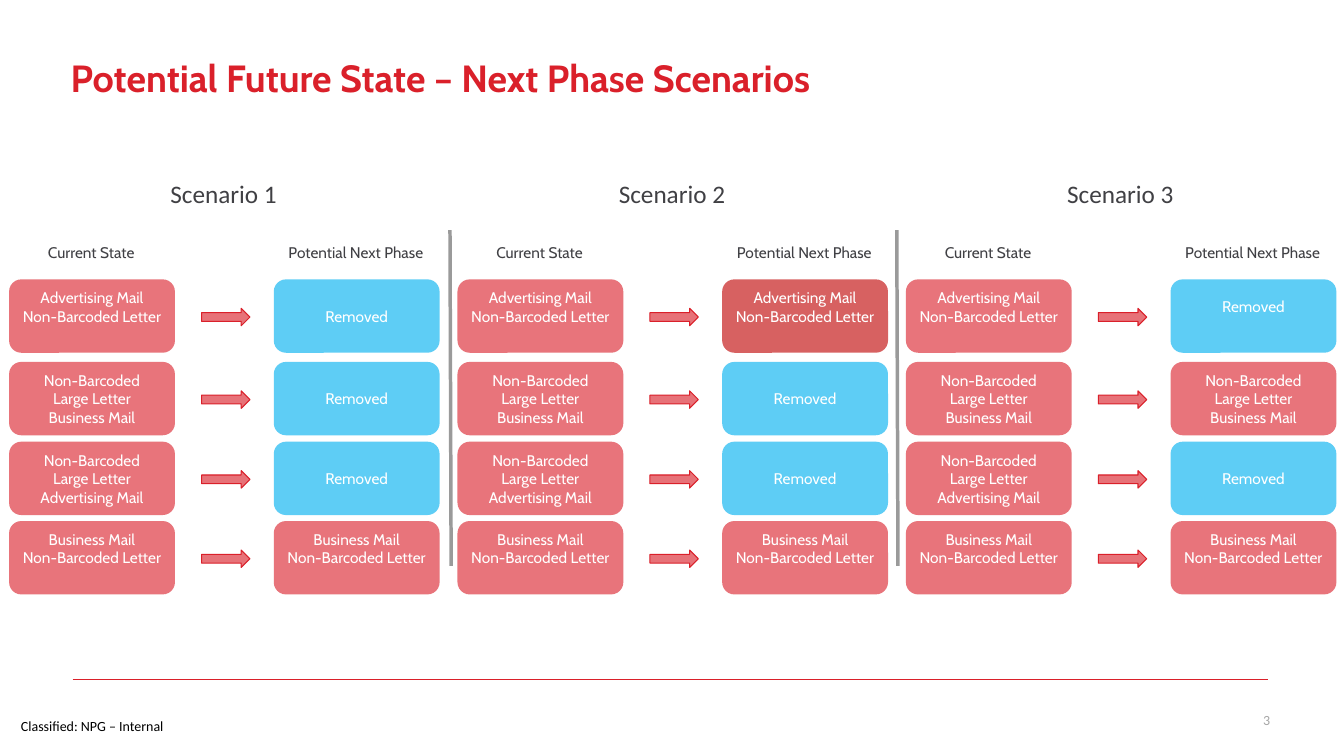
from lxml import etree
from pptx import Presentation
from pptx.dml.color import RGBColor
from pptx.enum.shapes import MSO_CONNECTOR, MSO_SHAPE
from pptx.enum.text import MSO_ANCHOR, MSO_AUTO_SIZE, PP_ALIGN
from pptx.oxml.ns import qn
from pptx.util import Cm, Pt

LEFT, CENTER, RIGHT = PP_ALIGN.LEFT, PP_ALIGN.CENTER, PP_ALIGN.RIGHT
TOP, MIDDLE = MSO_ANCHOR.TOP, MSO_ANCHOR.MIDDLE
ROUNDED, ARROW = MSO_SHAPE.ROUNDED_RECTANGLE, MSO_SHAPE.RIGHT_ARROW
STRAIGHT = MSO_CONNECTOR.STRAIGHT

RED, DARK_RED, BLUE = "DA202A", "C00000", "00B0F0"
WHITE, BLACK, TEXT_GRAY = "FFFFFF", "000000", "404044"
NUMBER_GRAY, DIVIDER_GRAY = "A6A6A6", "9A9A9A"

TITLE = "Potential Future State – Next Phase Scenarios"
CLASSIFICATION = "Classified: NPG – Internal"
SLIDE_NUMBER = "3"
CURRENT_HEADING = "Current State"
NEXT_HEADING = "Potential Next Phase"

ADVERTISING_LETTER = "Advertising Mail\nNon-Barcoded Letter"
BUSINESS_LARGE = "Non-Barcoded\nLarge Letter\nBusiness Mail"
ADVERTISING_LARGE = "Non-Barcoded\nLarge Letter\nAdvertising Mail"
BUSINESS_LETTER = "Business Mail\nNon-Barcoded Letter"
REMOVED = "Removed"

CURRENT_STATE = [ADVERTISING_LETTER, BUSINESS_LARGE, ADVERTISING_LARGE, BUSINESS_LETTER]
SCENARIOS = {
    "Scenario 1": [(REMOVED, BLUE), (REMOVED, BLUE), (REMOVED, BLUE), (BUSINESS_LETTER, RED)],
    "Scenario 2": [(ADVERTISING_LETTER, DARK_RED), (REMOVED, BLUE), (REMOVED, BLUE), (BUSINESS_LETTER, RED)],
    "Scenario 3": [(REMOVED, BLUE), (BUSINESS_LARGE, RED), (REMOVED, BLUE), (BUSINESS_LETTER, RED)],
}
RAISED_CELLS = {("Scenario 3", 0)}

FIRST_LEFT, SCENARIO_PITCH = 0.23, 11.3
NEXT_OFFSET, ARROW_OFFSET = 6.67, 4.85
HEADING_OFFSET, SCENARIO_OFFSET = 0.31, 2.88
ROW_TOPS = [7.04, 9.12, 11.13, 13.13]
BOX_WIDTH, BOX_HEIGHT = 4.18, 1.85
ARROW_DROP, ARROW_WIDTH, ARROW_HEIGHT = 0.73, 1.22, 0.44
RAISED_INSET = 0.47
DIVIDER_LEFT, DIVIDER_PITCH = 11.34, 11.26


def color(value):
    return RGBColor.from_string(value)


def write(shape, text, size, font_name, font_color, alignment=CENTER, anchor=MIDDLE, bottom=0):
    frame = shape.text_frame
    frame.text = text
    frame.word_wrap = True
    frame.auto_size = MSO_AUTO_SIZE.NONE
    frame.vertical_anchor = anchor
    frame.margin_left = frame.margin_right = frame.margin_top = 0
    frame.margin_bottom = Cm(bottom)
    for paragraph in frame.paragraphs:
        paragraph.alignment = alignment
        for run in paragraph.runs:
            run.font.size = Pt(size)
            run.font.name = font_name
            run.font.color.rgb = color(font_color)


def add_text(slide, left, top, width, height, *text_format):
    box = slide.shapes.add_textbox(Cm(left), Cm(top), Cm(width), Cm(height))
    write(box, *text_format)


def add_line(slide, start_x, start_y, end_x, end_y, line_color, width):
    line = slide.shapes.add_connector(STRAIGHT, Cm(start_x), Cm(start_y), Cm(end_x), Cm(end_y))
    line.line.color.rgb = color(line_color)
    line.line.width = Pt(width)
    etree.SubElement(line.element.spPr, qn("a:effectLst"))


def add_tinted_shape(slide, kind, left, top, width, height, fill_color, opacity):
    shape = slide.shapes.add_shape(kind, Cm(left), Cm(top), Cm(width), Cm(height))
    shape.shadow.inherit = False
    shape.fill.solid()
    shape.fill.fore_color.rgb = color(fill_color)
    fill = shape.element.spPr.find(qn("a:solidFill"))
    etree.SubElement(fill[0], qn("a:alpha"), val=str(opacity * 1000))
    return shape


def add_box(slide, left, top, text, fill_color, raised=False):
    opacity = 63 if fill_color == BLUE else 62
    box = add_tinted_shape(slide, ROUNDED, left, top, BOX_WIDTH, BOX_HEIGHT, fill_color, opacity)
    box.line.fill.background()
    raised = raised or text.count("\n") == 1
    write(box, text, 11, "Cabin", WHITE, bottom=RAISED_INSET if raised else 0)


def add_arrow(slide, left, top):
    arrow = add_tinted_shape(slide, ARROW, left, top, ARROW_WIDTH, ARROW_HEIGHT, RED, 63)
    arrow.line.color.rgb = color(RED)
    arrow.line.width = Pt(0.75)


def add_scenario(slide, left, name, next_phase):
    add_text(slide, left + SCENARIO_OFFSET, 4.37, 5.05, 1.02, name, 18, "Calibri", TEXT_GRAY)
    for offset, heading in [(0, CURRENT_HEADING), (NEXT_OFFSET, NEXT_HEADING)]:
        add_text(slide, left + HEADING_OFFSET + offset, 6.22, 3.52, 0.3, heading, 11, "Cabin", TEXT_GRAY)
    for row, (top, current, (following, fill_color)) in enumerate(zip(ROW_TOPS, CURRENT_STATE, next_phase)):
        add_box(slide, left, top, current, RED)
        add_arrow(slide, left + ARROW_OFFSET, top + ARROW_DROP)
        add_box(slide, left + NEXT_OFFSET, top, following, fill_color, (name, row) in RAISED_CELLS)


def main():
    presentation = Presentation()
    presentation.slide_width, presentation.slide_height = Cm(33.87), Cm(19.05)
    slide = presentation.slides.add_slide(presentation.slide_layouts[5])

    title = slide.shapes.title
    title.left, title.top, title.width, title.height = Cm(1.78), Cm(1.5), Cm(30.23), Cm(1.17)
    write(title, TITLE, 27, "Cabin", RED, LEFT, TOP)
    heading = title.text_frame.paragraphs[0]
    heading.line_spacing = 0.9
    heading.runs[0].font.bold = True

    for index, (name, next_phase) in enumerate(SCENARIOS.items()):
        add_scenario(slide, FIRST_LEFT + index * SCENARIO_PITCH, name, next_phase)
    for index in range(len(SCENARIOS) - 1):
        divider = DIVIDER_LEFT + index * DIVIDER_PITCH
        add_line(slide, divider, 5.8, divider + 0.03, 14.26, DIVIDER_GRAY, 2.5)

    add_line(slide, 1.83, 17.12, 31.95, 17.12, RED, 1)
    add_text(slide, 30.38, 17.8, 1.63, 0.66, SLIDE_NUMBER, 10, "Calibri", NUMBER_GRAY, RIGHT)
    add_text(slide, 0.53, 18.08, 4.2, 0.43, CLASSIFICATION, 10, "Calibri", BLACK, LEFT, TOP)
    presentation.save("out.pptx")


if __name__ == "__main__":
    main()
